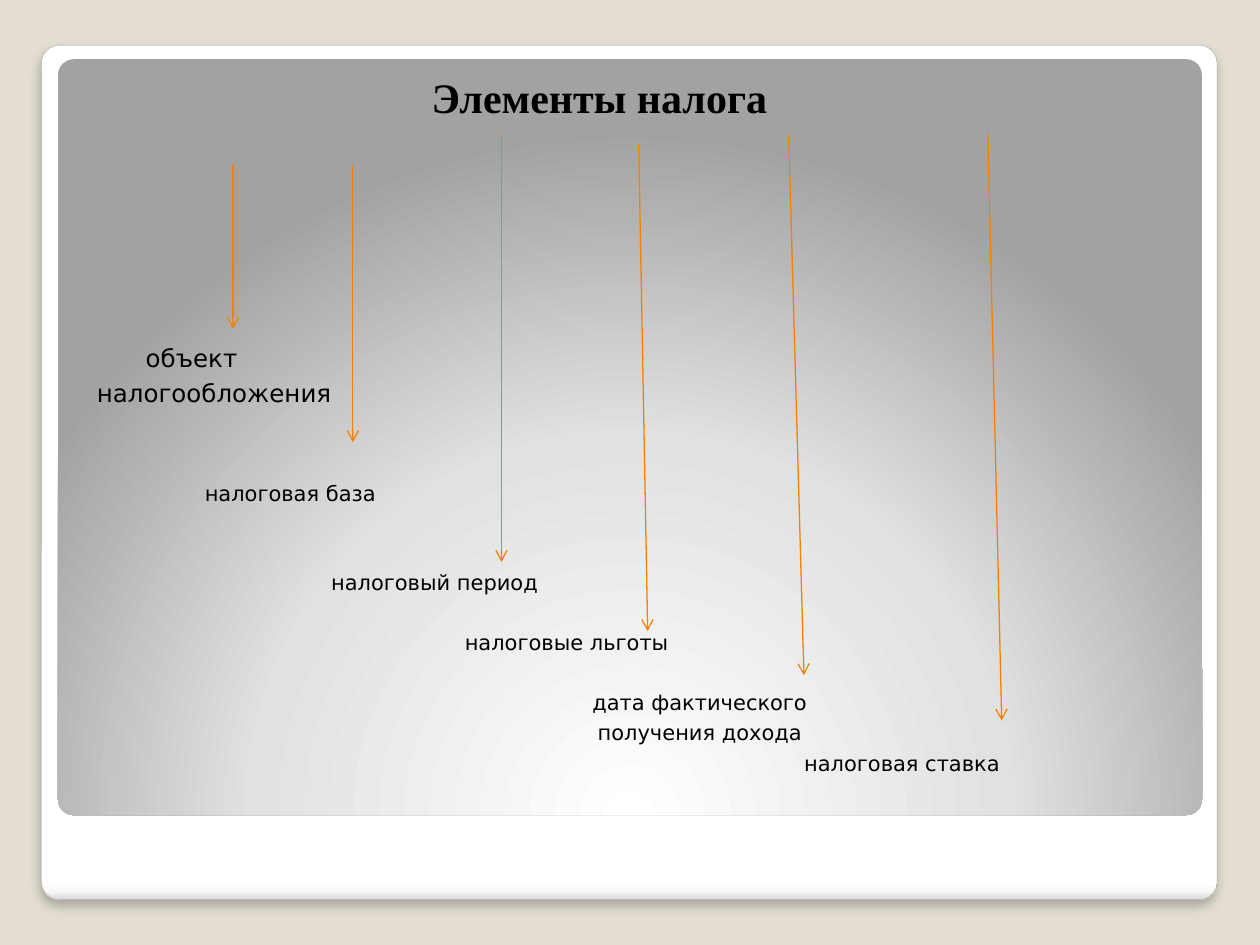
from lxml import etree
from pptx import Presentation
from pptx.dml.color import RGBColor
from pptx.enum.shapes import MSO_CONNECTOR, MSO_SHAPE
from pptx.enum.text import MSO_ANCHOR, MSO_AUTO_SIZE, PP_ALIGN
from pptx.oxml import parse_xml
from pptx.oxml.ns import qn
from pptx.util import Pt

ROUNDED = MSO_SHAPE.ROUNDED_RECTANGLE
STRAIGHT = MSO_CONNECTOR.STRAIGHT
TOP = MSO_ANCHOR.TOP
NO_AUTOFIT = MSO_AUTO_SIZE.NONE
LEFT, CENTER = PP_ALIGN.LEFT, PP_ALIGN.CENTER

BEIGE = RGBColor(0xE3, 0xDE, 0xD1)
GREY = RGBColor(0xA4, 0xA4, 0xA4)
ORANGE = RGBColor(0xF9, 0x7F, 0x00)
BLACK = RGBColor(0, 0, 0)
NS = 'xmlns:a="http://schemas.openxmlformats.org/drawingml/2006/main"'

# Content, lengths in points
TITLE = "Элементы налога"
ELEMENTS = [  # text, left edge, baseline, font size
    ("объект", 83.2, 209.1, 14),
    ("налогообложения", 55.3, 228.6, 14),
    ("налоговая база", 117, 284.6, 12),
    ("налоговый период", 189.2, 334.9, 12),
    ("налоговые льготы", 265.6, 369.1, 12),
    ("дата фактического", 338.5, 402.9, 12),
    ("получения дохода", 341.5, 419.4, 12),
    ("налоговая ставка", 459.5, 436.6, 12),
]
ARROWS = [  # start x, start y, end x, end y
    (133.2, 94.3, 133.2, 187.9),
    (201.6, 94.3, 201.6, 252.7),
    (286.56, 77, 286.56, 321.1),
    (365, 82.8, 370.1, 360.7),
    (450.7, 77, 459.4, 385.9),
    (564.5, 77, 572.4, 411.8),
]
CARD = (23.76, 25.92, 671.76, 488.16)
PANEL = (33.12, 33.84, 653.76, 432)
CARD_STOPS = [(0, "FFFFFF"), (98, "FFFFFF"), (99, "F7F7F7"), (100, "DADADA")]
PANEL_STOPS = [(0, "FFFFFF"), (55, "E1E1E1"), (100, "A2A2A2")]
DOWNWARD = '<a:lin ang="5400000" scaled="0"/>'
FROM_BOTTOM = ('<a:path path="circle"><a:fillToRect l="50000" t="175000" '
               'r="50000" b="-75000"/></a:path>')
CARD_SHADOW = (f'<a:effectLst {NS}><a:outerShdw blurRad="{Pt(6)}" dist="{Pt(4)}" '
               'dir="5400000" algn="t" rotWithShape="0"><a:srgbClr val="000000">'
               '<a:alpha val="25000"/></a:srgbClr></a:outerShdw></a:effectLst>')

# Line metrics of DejaVu Sans, in ems
ASCENT, DESCENT = 0.928, 0.236
TEXT_LEFT, TEXT_WIDTH = 20, 645


def add_rounded(slide, box, stops, direction):
    shape = slide.shapes.add_shape(ROUNDED, *map(Pt, box))
    shape.adjustments[0] = 0.021
    shape.shadow.inherit = False
    colours = "".join(f'<a:gs pos="{pos * 1000}"><a:srgbClr val="{rgb}"/></a:gs>'
                      for pos, rgb in stops)
    shape._element.spPr.find(qn("a:prstGeom")).addnext(parse_xml(
        f'<a:gradFill {NS} rotWithShape="1"><a:gsLst>{colours}</a:gsLst>'
        f'{direction}</a:gradFill>'))
    return shape


def place_frame(placeholder, top, height):
    placeholder.left, placeholder.top = Pt(TEXT_LEFT), Pt(top)
    placeholder.width, placeholder.height = Pt(TEXT_WIDTH), Pt(height)
    frame = placeholder.text_frame
    frame.margin_left = frame.margin_right = 0
    frame.margin_top = frame.margin_bottom = 0
    frame.vertical_anchor = TOP
    frame.auto_size = NO_AUTOFIT
    frame.word_wrap = True
    return frame


def write(paragraph, text, *, size, font="DejaVu Sans", bold=False,
          align=LEFT, indent=0, before=0):
    paragraph.alignment = align
    paragraph.line_spacing = 1.0
    paragraph.space_before, paragraph.space_after = Pt(before), Pt(0)
    properties = paragraph._p.get_or_add_pPr()
    properties.set("marL", str(Pt(indent)))
    properties.set("indent", "0")
    etree.SubElement(properties, qn("a:buNone"))
    run = paragraph.add_run()
    run.text = text
    run.font.name, run.font.size, run.font.bold = font, Pt(size), bold
    run.font.color.rgb = BLACK


def add_arrow(slide, ends):
    arrow = slide.shapes.add_connector(STRAIGHT, *map(Pt, ends))
    arrow.line.color.rgb = ORANGE
    arrow.line.width = Pt(0.75)
    etree.SubElement(arrow.line._get_or_add_ln(), qn("a:tailEnd"), type="arrow")
    etree.SubElement(arrow._element.spPr, qn("a:effectLst"))


def main():
    prs = Presentation()
    prs.slide_width, prs.slide_height = Pt(720), Pt(540)
    slide = prs.slides.add_slide(prs.slide_layouts[1])
    slide.background.fill.solid()
    slide.background.fill.fore_color.rgb = BEIGE
    title, body = slide.placeholders

    # Card and panel, behind the text
    card = add_rounded(slide, CARD, CARD_STOPS, DOWNWARD)
    card.line.color.rgb = GREY
    card.line.width = Pt(0.16)
    properties = card._element.spPr
    properties.replace(properties.find(qn("a:effectLst")), parse_xml(CARD_SHADOW))
    panel = add_rounded(slide, PANEL, PANEL_STOPS, FROM_BOTTOM)
    panel.line.fill.background()
    for shape in (title, body):
        slide.shapes._spTree.append(shape._element)

    # Title
    frame = place_frame(title, 41, 30)
    write(frame.paragraphs[0], TITLE, size=24, font="Times New Roman",
          bold=True, align=CENTER)

    # Stepped list: paragraph spacing brings each line to its baseline
    bottom = ELEMENTS[0][2] - ASCENT * ELEMENTS[0][3]
    frame = place_frame(body, bottom, 458 - bottom)
    for i, (text, left, baseline, size) in enumerate(ELEMENTS):
        paragraph = frame.add_paragraph() if i else frame.paragraphs[0]
        gap = baseline - ASCENT * size - bottom
        write(paragraph, text, size=size, indent=left - TEXT_LEFT, before=gap)
        bottom = baseline + DESCENT * size

    # Arrows from the title to the elements
    for ends in ARROWS:
        add_arrow(slide, ends)

    prs.save("out.pptx")


if __name__ == "__main__":
    main()
